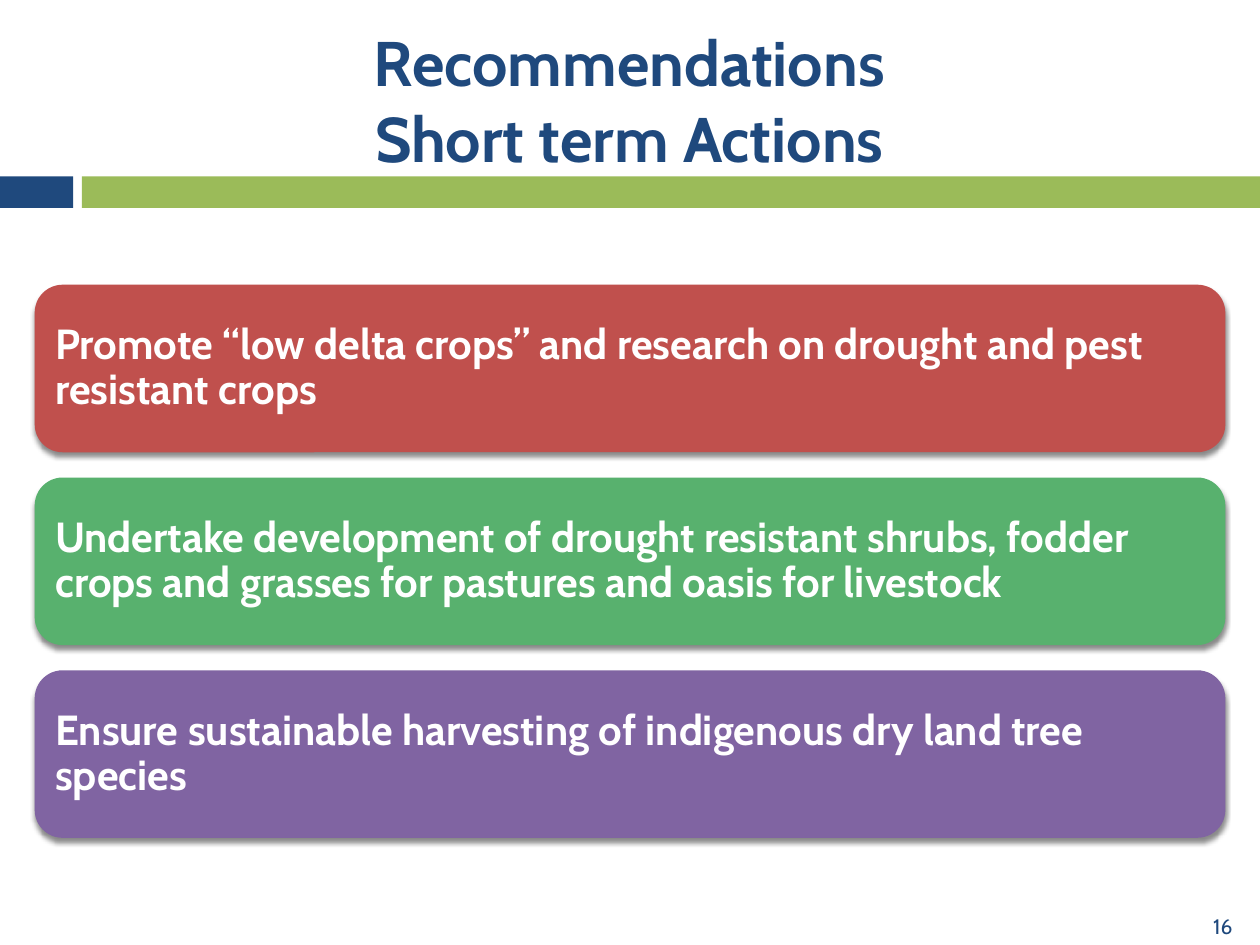
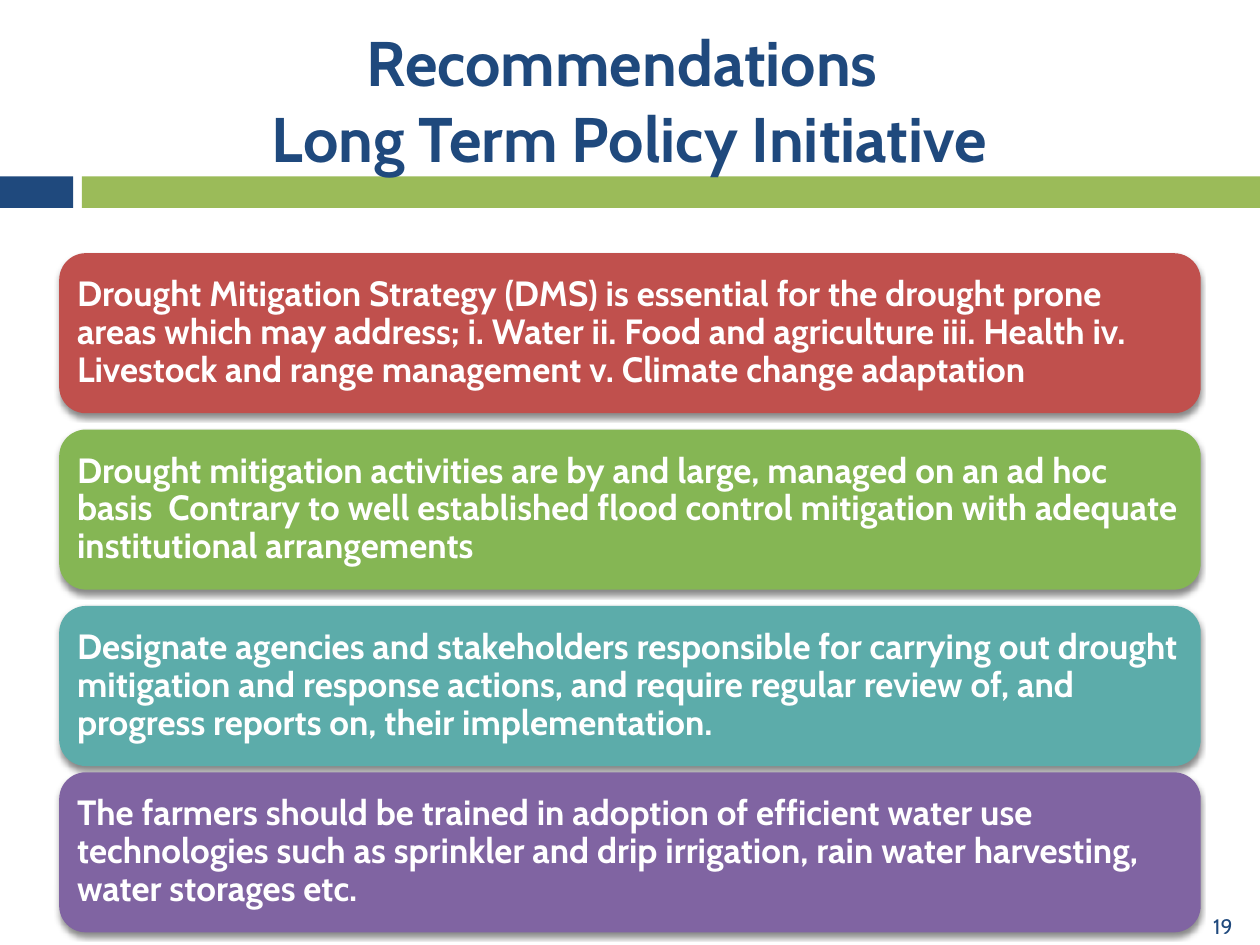
from dataclasses import dataclass

from lxml import etree
from pptx import Presentation
from pptx.dml.color import RGBColor
from pptx.enum.shapes import MSO_SHAPE as Kind
from pptx.enum.text import MSO_ANCHOR as Anchor, MSO_AUTO_SIZE as Fit, PP_ALIGN as Align
from pptx.util import Inches, Pt

SLIDES = [
    {
        "title": "Recommendations\vShort term Actions",
        "page": "16",
        "grid": {"top": 2.26, "wide": 9.45, "high": 1.33, "gap": 0.2, "lift": 0},
        "size": 24,
        "pad": 0.1,
        "cards": [
            ("C0504D", "Promote “low delta crops” and research on drought and pest resistant crops"),
            ("58B16E", "Undertake development of drought resistant shrubs, fodder crops "
                       "and grasses for pastures and oasis for livestock"),
            ("8064A2", "Ensure sustainable harvesting of indigenous dry land tree species"),
        ],
    },
    {
        "title": "Recommendations \vLong Term Policy Initiative",
        "page": "19",
        "grid": {"top": 2.01, "wide": 9.06, "high": 1.27, "gap": 0.13, "lift": 0.08},
        "size": 20,
        "pad": 0.08,
        "cards": [
            ("C0504D", "Drought Mitigation Strategy (DMS) is essential for the drought prone "
                       "areas which may address; i. Water ii. Food and agriculture iii. Health iv. "
                       "Livestock and range management v. Climate change adaptation"),
            ("85B654", "Drought mitigation activities are by and large, managed on an ad hoc "
                       "basis  Contrary to well established flood control mitigation with "
                       "adequate institutional arrangements"),
            ("5CACAA", "Designate agencies and stakeholders responsible for carrying out drought "
                       "mitigation and response actions, and require regular review of, and "
                       "progress reports on, their implementation."),
            ("8064A2", "The farmers should be trained in adoption of efficient water use "
                       "technologies such as sprinkler and drip irrigation, rain water "
                       "harvesting, water storages etc."),
        ],
    },
]


@dataclass(frozen=True)
class Theme:
    font: str = "Cabin"
    navy: str = "1F497D"
    green: str = "9BBB59"
    white: str = "FFFFFF"
    title: int = 36
    page: int = 12


THEME = Theme()
WIDE, HIGH = 10, 7.5
TITLE_BOX = (0.83, 0.25, 8.33, 1.08)
PAGE_BOX = (9.41, 7.2, 0.59, 0.3)
BANDS = [(0, 0.58, THEME.navy), (0.65, WIDE - 0.65, THEME.green)]
BAND_TOP, BAND_HIGH = 1.4, 0.25

NS = "http://schemas.openxmlformats.org/drawingml/2006/main"
SHADE = f"""<a:effectLst xmlns:a="{NS}">
  <a:outerShdw blurRad="{Pt(3)}" dist="{Pt(2.4)}" dir="5400000" rotWithShape="0">
    <a:srgbClr val="000000"><a:alpha val="45000"/></a:srgbClr>
  </a:outerShdw>
</a:effectLst>"""


def place(shape, box):
    shape.left, shape.top, shape.width, shape.height = map(Inches, box)


def block(slide, kind, box, color):
    shape = slide.shapes.add_shape(kind, *map(Inches, box))
    shape.fill.solid()
    shape.fill.fore_color.rgb = RGBColor.from_string(color)
    shape.line.fill.background()
    shape.shadow.inherit = False
    return shape


def write(shape, text, size, color, bold=False, align=Align.CENTER):
    frame = shape.text_frame
    frame.text = text
    frame.word_wrap = True
    frame.auto_size = Fit.NONE
    frame.vertical_anchor = Anchor.MIDDLE
    para = frame.paragraphs[0]
    para.alignment = align
    font = para.font
    font.name, font.size, font.bold = THEME.font, Pt(size), bold
    font.color.rgb = RGBColor.from_string(color)
    return frame


def cast_shadow(shape):
    props = shape.element.spPr
    props.remove(props.find(f"{{{NS}}}effectLst"))
    props.append(etree.fromstring(SHADE))


def set_layout(layout, slide):
    """Place the title and move the bands, drawn on a slide, behind it in the layout."""
    place(layout.placeholders[0], TITLE_BOX)
    tree = layout.shapes.element
    for left, wide, color in BANDS:
        band = block(slide, Kind.RECTANGLE, (left, BAND_TOP, wide, BAND_HIGH), color)
        tree.insert(2, band.element)


def add_cards(slide, cards, grid, size, pad):
    """Stack the cards in a centred column; lift pulls the last one up."""
    wide, high = grid["wide"], grid["high"]
    for row, (color, text) in enumerate(cards):
        top = grid["top"] + row * (high + grid["gap"])
        if row == len(cards) - 1:
            top -= grid["lift"]
        box = ((WIDE - wide) / 2, top, wide, high)
        card = block(slide, Kind.ROUNDED_RECTANGLE, box, color)
        cast_shadow(card)
        frame = write(card, text, size, THEME.white, True, Align.LEFT)
        frame.margin_left = frame.margin_right = Inches(pad)
        frame.margin_top = frame.margin_bottom = Inches(pad)
        frame.paragraphs[0].line_spacing = 0.9


def main():
    deck = Presentation()
    deck.slide_width, deck.slide_height = Inches(WIDE), Inches(HIGH)
    layout = deck.slide_layouts[5]
    for index, item in enumerate(SLIDES):
        slide = deck.slides.add_slide(layout)
        if index == 0:
            set_layout(layout, slide)
        write(slide.shapes.title, item["title"], THEME.title, THEME.navy, True)
        add_cards(slide, item["cards"], item["grid"], item["size"], item["pad"])
        page = slide.shapes.add_textbox(*map(Inches, PAGE_BOX))
        write(page, item["page"], THEME.page, THEME.navy)
    deck.save("out.pptx")


if __name__ == "__main__":
    main()
